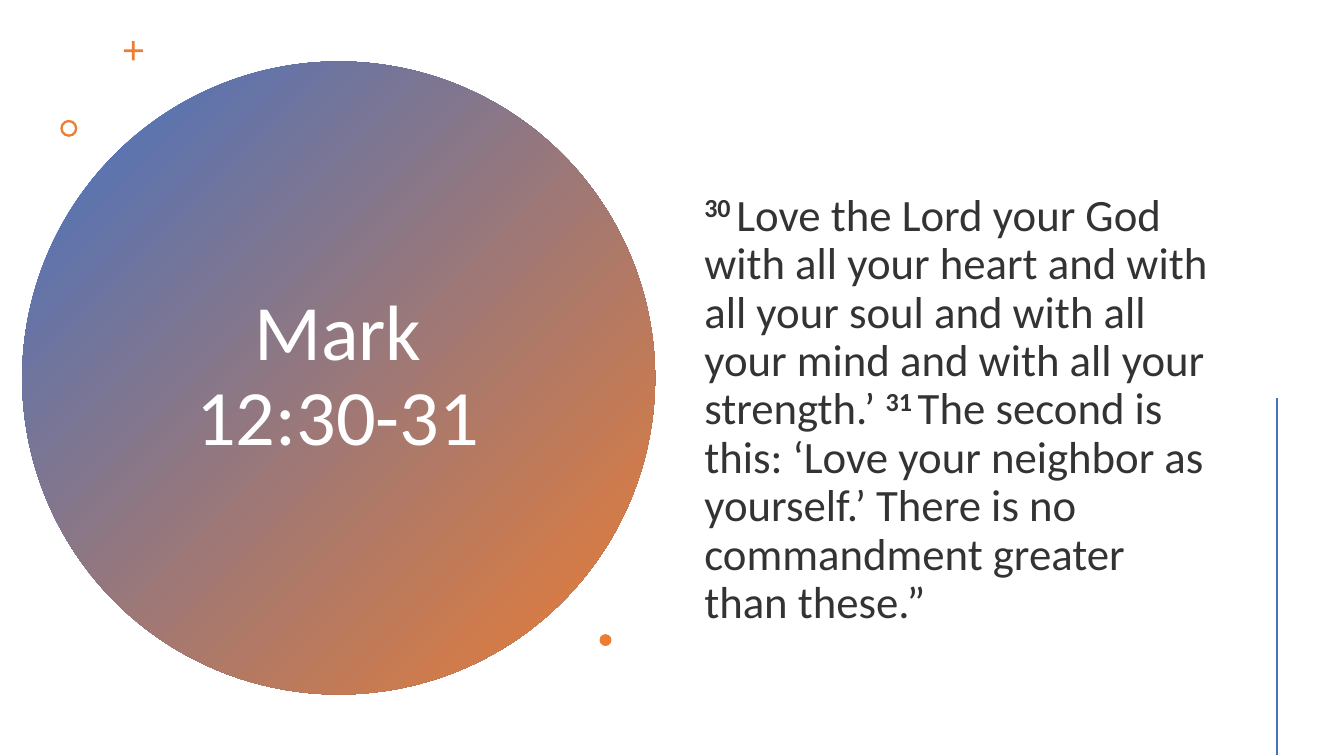
from dataclasses import dataclass

from lxml.etree import SubElement
from pptx import Presentation
from pptx.dml.color import RGBColor
from pptx.enum.shapes import MSO_CONNECTOR as Connector
from pptx.enum.shapes import MSO_SHAPE as Preset
from pptx.enum.text import MSO_ANCHOR as Anchor
from pptx.enum.text import PP_ALIGN as Align
from pptx.oxml.ns import qn
from pptx.shapes.autoshape import Shape
from pptx.slide import Slide
from pptx.util import Cm, Pt


@dataclass(frozen=True)
class Theme:
    blue: RGBColor = RGBColor(0x44, 0x72, 0xC4)
    orange: RGBColor = RGBColor(0xED, 0x7D, 0x31)
    white: RGBColor = RGBColor(0xFF, 0xFF, 0xFF)
    black: RGBColor = RGBColor(0, 0, 0)
    font: str = "Calibri"
    title_size: Pt = Pt(56)
    verse_size: Pt = Pt(32)
    rule_width: Pt = Pt(2)
    line_spacing: float = 0.9


@dataclass(frozen=True)
class Round:
    """A shape as wide as it is high, in centimetres."""
    preset: Preset
    left: float
    top: float
    size: float
    adjustment: float | None = None


@dataclass(frozen=True)
class TextRun:
    text: str
    is_verse_number: bool = False


@dataclass(frozen=True)
class TextBlock:
    left: float
    top: float
    width: float
    height: float
    runs: tuple[TextRun, ...]
    size: Pt
    color: RGBColor
    align: Align
    opacity: int = 100
    top_inset: float = 0.13


THEME = Theme()
DISC = Round(Preset.OVAL, 0.56, 1.55, 15.95)
ORNAMENTS = (
    Round(Preset.CROSS, 3.12, 1.04, 0.48, 0.43),
    Round(Preset.DONUT, 1.52, 3.02, 0.43, 0.14),
    Round(Preset.OVAL, 15.11, 15.98, 0.3),
)
TITLE = TextBlock(3.45, 3.58, 10.13, 11.86, (TextRun("Mark 12:30-31"),),
                  THEME.title_size, THEME.white, Align.CENTER)
VERSES = TextBlock(
    17.5, 1.45, 13.26, 16.21,
    (
        TextRun("30 ", is_verse_number=True),
        TextRun("Love the Lord your God with all your heart and with all your soul "
                "and with all your mind and with all your strength.’ "),
        TextRun("31 ", is_verse_number=True),
        TextRun("The second is this: ‘Love your neighbor as yourself.’ "
                "There is no commandment greater than these.”"),
    ),
    THEME.verse_size, THEME.black, Align.LEFT, opacity=80, top_inset=1.7)


def add_round(slide: Slide, item: Round) -> Shape:
    shape = slide.shapes.add_shape(item.preset, Cm(item.left), Cm(item.top),
                                   Cm(item.size), Cm(item.size))
    shape.shadow.inherit = False
    shape.line.fill.background()
    shape.fill.solid()
    shape.fill.fore_color.rgb = THEME.orange
    if item.adjustment is not None:
        shape.adjustments[0] = item.adjustment
    return shape


def add_disc(slide: Slide) -> None:
    fill = add_round(slide, DISC).fill
    fill.gradient()
    fill.gradient_angle = 315
    for stop, color in zip(fill.gradient_stops, (THEME.blue, THEME.orange)):
        stop.color.rgb = color


def add_text(slide: Slide, block: TextBlock) -> None:
    box = slide.shapes.add_textbox(Cm(block.left), Cm(block.top),
                                   Cm(block.width), Cm(block.height))
    frame = box.text_frame
    frame.word_wrap = True
    frame.vertical_anchor = Anchor.MIDDLE
    frame.margin_top = Cm(block.top_inset)
    paragraph = frame.paragraphs[0]
    paragraph.alignment = block.align
    paragraph.line_spacing = THEME.line_spacing
    for item in block.runs:
        run = paragraph.add_run()
        run.text = item.text
        run.font.name = THEME.font
        run.font.size = block.size
        run.font.bold = item.is_verse_number
        run.font.color.rgb = block.color
        properties = run._r.get_or_add_rPr()
        if item.is_verse_number:
            properties.set("baseline", "30000")
        if block.opacity < 100:
            color = properties.find(f"{qn('a:solidFill')}/{qn('a:srgbClr')}")
            SubElement(color, qn("a:alpha")).set("val", str(block.opacity * 1000))


def add_rule(slide: Slide) -> None:
    rule = slide.shapes.add_connector(Connector.STRAIGHT, Cm(32.18), Cm(10.03),
                                      Cm(32.18), Cm(19.03))
    rule.line.color.rgb = THEME.blue
    rule.line.width = THEME.rule_width
    SubElement(rule._element.spPr, qn("a:effectLst"))


def main() -> None:
    presentation = Presentation()
    presentation.slide_width = Cm(33.87)
    presentation.slide_height = Cm(19.05)
    slide = presentation.slides.add_slide(presentation.slide_layouts[6])
    slide.background.fill.solid()
    slide.background.fill.fore_color.rgb = THEME.white
    add_disc(slide)
    for ornament in ORNAMENTS:
        add_round(slide, ornament)
    for block in (TITLE, VERSES):
        add_text(slide, block)
    add_rule(slide)
    presentation.save("out.pptx")


if __name__ == "__main__":
    main()
